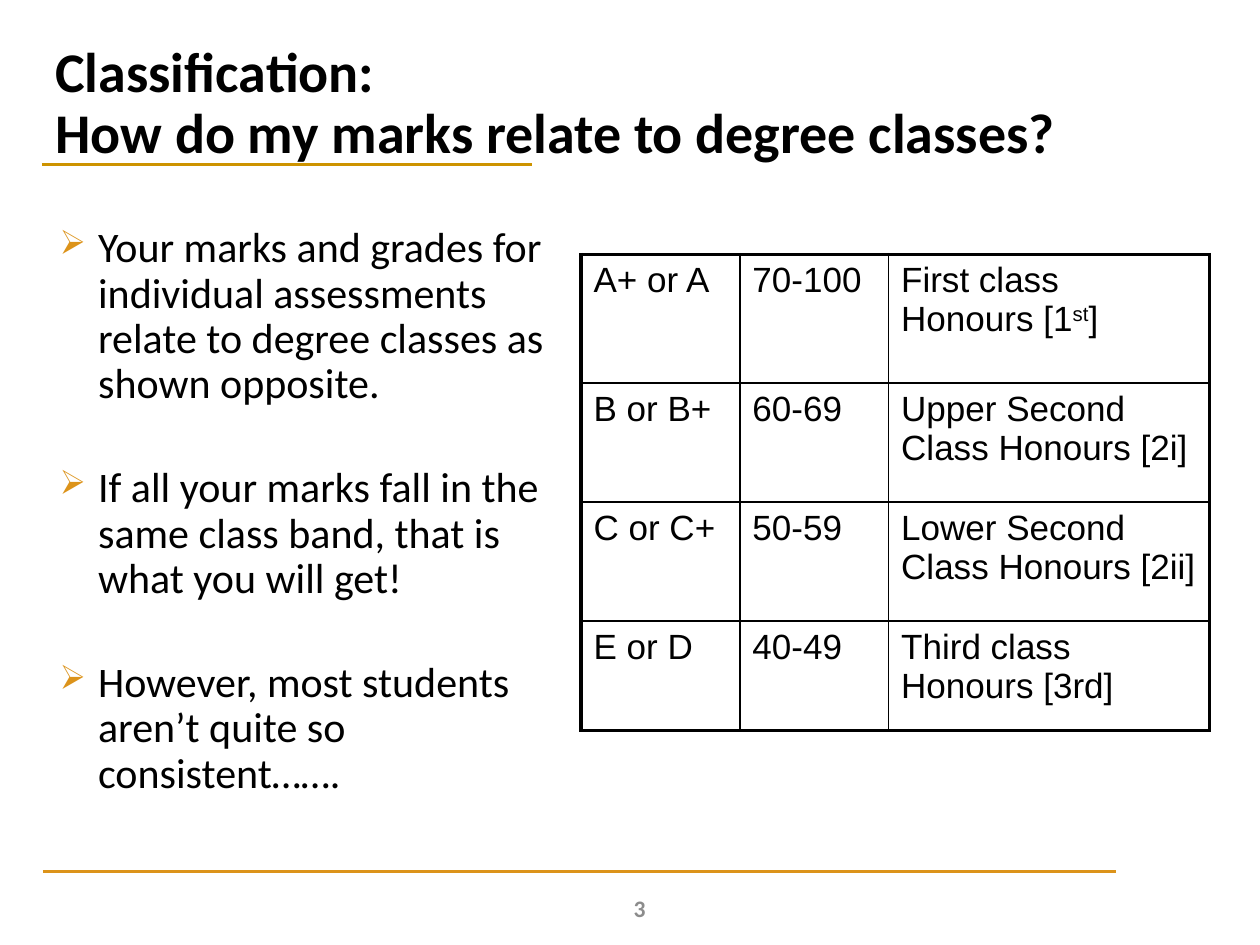
from lxml import etree
from pptx import Presentation
from pptx.dml.color import RGBColor
from pptx.enum.shapes import MSO_CONNECTOR
from pptx.enum.text import MSO_ANCHOR, PP_ALIGN
from pptx.oxml.ns import qn
from pptx.util import Pt

STRAIGHT = MSO_CONNECTOR.STRAIGHT
MIDDLE = MSO_ANCHOR.MIDDLE
RIGHT = PP_ALIGN.RIGHT
COLORS = {"text": "000000", "title_rule": "CD9300", "accent": "DC931A", "number": "8C8C8C"}


def add_text(slide, box, paragraphs, size, color, bold=False):
    sp = slide.shapes.add_textbox(*[Pt(v) for v in box])
    tf = sp.text_frame
    tf.word_wrap = True
    tf.text = "\n".join(paragraphs)
    for p in tf.paragraphs:
        for r in p.runs:
            style_run(r, "Calibri", size, color, bold)
    return tf


def style_run(r, font, size, color, bold=False):
    r.font.name = font
    r.font.size = Pt(size)
    r.font.bold = bold
    r.font.color.rgb = RGBColor.from_string(COLORS[color])


prs = Presentation()
prs.slide_width = Pt(720)
prs.slide_height = Pt(540)
s = prs.slides.add_slide(prs.slide_layouts[6])

for left, right, y, color in [(24, 304, 94, "title_rule"), (24.5, 637.5, 498, "accent")]:
    rule = s.shapes.add_connector(STRAIGHT, Pt(left), Pt(y), Pt(right), Pt(y))
    rule.line.width = Pt(2.25)
    rule.line.color.rgb = RGBColor.from_string(COLORS[color])
    etree.SubElement(rule._element.spPr, qn("a:effectLst"))

title = ["Classification:\vHow do my marks relate to degree classes?"]
tf = add_text(s, (24.5, 27.4, 666, 65), title, 32, "text", True)
tf.vertical_anchor = MIDDLE
tf.paragraphs[0].line_spacing = 0.9

points = [
    "Your marks and grades for individual assessments relate to degree classes as shown opposite.",
    "If all your marks fall in the same class band, that is what you will get!",
    "However, most students aren’t quite so consistent…….",
]
tf = add_text(s, (0, 126, 319, 357), points, 24, "text")
for i, p in enumerate(tf.paragraphs):
    p.line_spacing = 0.9
    if i:
        p.space_before = Pt(33.5)
    pPr = p._p.get_or_add_pPr()
    pPr.set("marL", str(Pt(49)))
    pPr.set("indent", str(Pt(-22)))
    bullet_color = etree.SubElement(pPr, qn("a:buClr"))
    etree.SubElement(bullet_color, qn("a:srgbClr"), val=COLORS["accent"])
    etree.SubElement(pPr, qn("a:buSzPct"), val="80000")
    etree.SubElement(pPr, qn("a:buChar"), char="➢")

tf = add_text(s, (343.5, 504.5, 32.4, 29), ["3"], 13.5, "number", True)
tf.vertical_anchor = MIDDLE
tf.paragraphs[0].alignment = RIGHT

grades = [
    ("A+ or A", "70-100", ["First class Honours [1", "st", "]"]),
    ("B or B+", "60-69", ["Upper Second Class Honours [2i]"]),
    ("C or C+", "50-59", ["Lower Second Class Honours [2ii]"]),
    ("E or D", "40-49", ["Third class Honours [3rd]"]),
]
widths = [90.8, 85, 183.5]
heights = [73.5, 68, 68, 62.5]
frame = s.shapes.add_table(len(heights), len(widths), Pt(332), Pt(145.5),
                           Pt(sum(widths)), Pt(sum(heights)))
table = frame.table
table.first_row = False
table.horz_banding = False
for col, width in zip(table.columns, widths):
    col.width = Pt(width)
for row, height in zip(table.rows, heights):
    row.height = Pt(height)

for i, (grade, marks, degree) in enumerate(grades):
    for j, parts in enumerate([[grade], [marks], degree]):
        cell = table.cell(i, j)
        p = cell.text_frame.paragraphs[0]
        for part in parts:
            r = p.add_run()
            r.text = part
            style_run(r, "Arial", 20, "text")
            if part == "st":
                r.font._element.set("baseline", "30000")
        cell.fill.background()
        tcPr = cell._tc.get_or_add_tcPr()
        outer = {"lnL": j == 0, "lnR": j == len(widths) - 1,
                 "lnT": i == 0, "lnB": i == len(heights) - 1}
        for k, (side, is_outer) in enumerate(outer.items()):
            ln = etree.Element(qn("a:" + side), w=str(Pt(2.25 if is_outer else 1)))
            fill = etree.SubElement(ln, qn("a:solidFill"))
            etree.SubElement(fill, qn("a:srgbClr"), val=COLORS["text"])
            tcPr.insert(k, ln)

prs.save("out.pptx")
